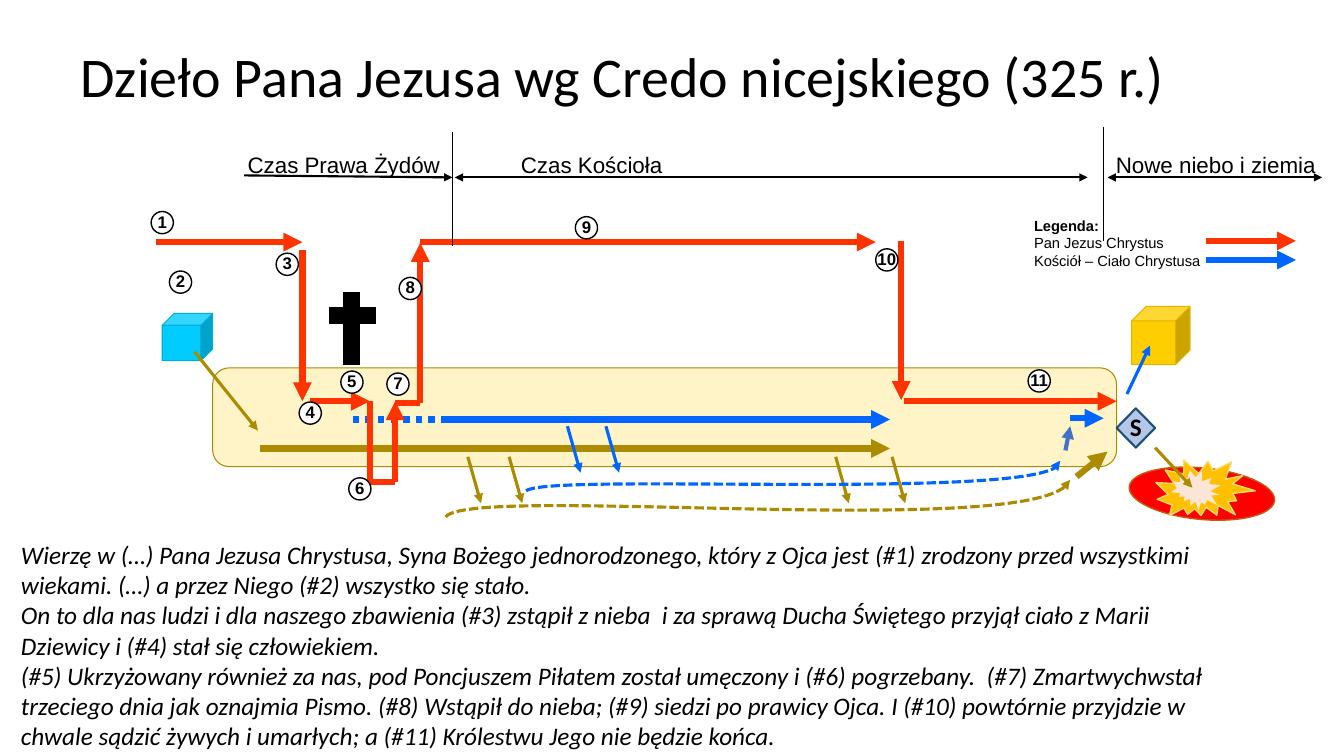
from typing import NamedTuple, Optional

from lxml import etree
from pptx import Presentation
from pptx import util as u
from pptx.dml.color import RGBColor
from pptx.enum import dml, shapes, text
from pptx.oxml.ns import qn

RED, BLUE, GOLD, BLACK, WHITE = "FF3300", "0066FF", "AD8B00", "000000", "FFFFFF"
DOTS, DASHES = dml.MSO_LINE.ROUND_DOT, dml.MSO_LINE.SQUARE_DOT
KIND = shapes.MSO_SHAPE
LEFT, CENTER = text.PP_ALIGN.LEFT, text.PP_ALIGN.CENTER
TOP, MIDDLE = text.MSO_ANCHOR.TOP, text.MSO_ANCHOR.MIDDLE
CURVE_STEPS = 60


class Line(NamedTuple):
    x1: float
    y1: float
    x2: float
    y2: float
    color: str = RED
    width: float = 4.5
    tail: bool = True
    head: bool = False
    dash: Optional[dml.MSO_LINE] = None


class Curve(NamedTuple):
    """A cubic curve: start, two control points, end."""
    points: tuple
    color: str


class Figure(NamedTuple):
    kind: shapes.MSO_SHAPE
    box: tuple
    fill: str
    outline: Optional[str]
    width: float = 0.75
    rotation: float = 0


class Label(NamedTuple):
    box: tuple
    lines: tuple
    size: float
    font: str = "Arial"
    align: text.PP_ALIGN = LEFT
    anchor: text.MSO_ANCHOR = TOP
    inset: float = 0.25
    italic: bool = False
    spacing: float = 1.0


BAND = Figure(KIND.ROUNDED_RECTANGLE, (5.36, 9.27, 22.78, 2.49), "FFF4C7", GOLD)
DIAMOND = Figure(KIND.DIAMOND, (28.14, 10.29, 0.97, 0.99), "B4C7E7", "1F4E79", 1.5)
FIGURES = [
    Figure(KIND.CUBE, (4.09, 7.9, 1.27, 1.19), "00CCFF", "00AED8"),
    Figure(KIND.CUBE, (28.52, 7.72, 1.47, 1.47), "FFCE00", "E0B400"),
    Figure(KIND.FLOWCHART_CONNECTOR, (28.45, 11.79, 3.68, 1.3), "FF0000", "C55A11", 1, 5.4),
    Figure(KIND.EXPLOSION2, (29.13, 11.48, 2.46, 1.73), "FFC000", "FFD966", 1, 16.2),
    Figure(KIND.EXPLOSION2, (29.57, 11.79, 1.19, 1.14), "FBE5D6", None, 0, 56.2),
]
TIMELINE = [
    Line(11.46, 4.47, 27.41, 4.47, BLACK, 1.5, head=True),
    Line(11.4, 4.47, 6.15, 4.42, BLACK, 1.5, tail=False, head=True),
    Line(27.91, 4.47, 33.32, 4.47, BLACK, 1.5, head=True),
    Line(11.4, 3.33, 11.4, 6.2, BLACK, 0.5, tail=False),
    Line(27.81, 3.2, 27.81, 6.07, BLACK, 0.5, tail=False),
]
COURSE = [
    Line(6.55, 11.3, 22.43, 11.3, GOLD),
    Line(10.59, 6.1, 22.07, 6.1),
    Line(11.2, 10.57, 22.43, 10.57, BLUE),
    Line(10.59, 10.16, 10.59, 6.12),
    Line(8.89, 10.57, 11.86, 10.57, BLUE, tail=False, dash=DOTS),
    Line(7.62, 6.3, 7.62, 10.11),
    Line(7.82, 10.11, 9.32, 10.11),
    Line(22.71, 6.07, 22.71, 10.08),
    Line(3.94, 6.1, 7.62, 6.1),
    Line(22.78, 10.11, 28.14, 10.11),
    Line(26.97, 10.54, 27.81, 10.54, BLUE),
    Line(9.32, 10.11, 9.32, 12.14, tail=False),
    Line(9.32, 12.14, 9.96, 12.14, tail=False),
    Line(9.96, 12.14, 9.96, 10.11),
    Line(9.96, 10.16, 10.59, 10.16, tail=False),
    Line(26.85, 11.35, 26.97, 10.74, "4472C4", 3, dash=DASHES),
    Line(27.13, 12.01, 27.91, 11.38, GOLD),
]
LEGEND = [Line(30.4, y, 32.66, y, color) for y, color in ((6.07, RED), (6.55, BLUE))]
CROSS = [
    Line(8.28, 7.95, 9.47, 7.95, BLACK, 12, tail=False),
    Line(8.86, 9.19, 8.86, 7.37, BLACK, 12, tail=False),
]
DEPARTURES = [
    Line(x, y, x + 0.33, y + 1.17, color, 2.25)
    for color, y, lefts in ((GOLD, 11.51, (11.79, 12.83, 21.06, 22.48)),
                            (BLUE, 10.74, (14.3, 15.27)))
    for x in lefts
]
DESTINATIONS = [
    Line(4.9, 8.86, 6.5, 10.85, GOLD, 2.25),
    Line(28.4, 9.93, 28.98, 8.71, BLUE, 2.25),
    Line(29.11, 11.28, 30.05, 12.29, GOLD, 2.25),
]
CURVES = [
    Curve(((11.23, 13.03), (11.81, 12.17), (26.42, 13.67), (26.97, 12.09)), GOLD),
    Curve(((13.26, 12.37), (13.79, 11.89), (26.82, 12.67), (26.72, 11.61)), BLUE),
]
ERAS = [
    Label((x, 3.71, width, 0.89), (name,), 16, align=CENTER, anchor=MIDDLE, inset=0.1)
    for x, width, name in ((5.92, 5.49, "Czas Prawa Żydów"), (12.47, 4.88, "Czas Kościoła"),
                           (27.81, 5.66, "Nowe niebo i ziemia"))
]
TITLE = Label((1.78, 1.02, 31.22, 1.98), ("Dzieło Pana Jezusa wg Credo nicejskiego (325 r.)",),
              40, "Calibri", anchor=MIDDLE, spacing=0.9)
LEGEND_TEXT = Label((25.81, 5.33, 5.05, 1.6),
                    ("Legenda:", "Pan Jezus Chrystus", "Kościół – Ciało Chrystusa"), 10.5)
CREED = Label((0.28, 13.46, 30.58, 5.64), (
    "Wierzę w (…) Pana Jezusa Chrystusa, Syna Bożego jednorodzonego, który z Ojca jest (#1) "
    "zrodzony przed wszystkimi wiekami. (…) a przez Niego (#2) wszystko się stało.",
    "On to dla nas ludzi i dla naszego zbawienia (#3) zstąpił z nieba  i za sprawą Ducha "
    "Świętego przyjął ciało z Marii Dziewicy i (#4) stał się człowiekiem.",
    "(#5) Ukrzyżowany również za nas, pod Poncjuszem Piłatem został umęczony i (#6) "
    "pogrzebany.  (#7) Zmartwychwstał trzeciego dnia jak oznajmia Pismo. (#8) Wstąpił do "
    "nieba; (#9) siedzi po prawicy Ojca. I (#10) powtórnie przyjdzie w chwale sądzić żywych "
    "i umarłych; a (#11) Królestwu Jego nie będzie końca."), 18, "Calibri", italic=True)
# Left and top of the numbered circles, from 1 to 11
STEPS = [(3.81, 5.33), (4.27, 6.83), (6.96, 6.38), (7.54, 10.13), (8.59, 9.35), (8.79, 12.04),
         (9.75, 9.4), (10.06, 6.99), (14.5, 5.46), (22.07, 6.27), (25.91, 9.32)]


def rgb(color: str) -> RGBColor:
    return RGBColor.from_string(color)


def style_line(shape, color: str, width: float, tail: bool, head: bool, dash) -> None:
    shape.line.color.rgb = rgb(color)
    shape.line.width = u.Pt(width)
    if dash is not None:
        shape.line.dash_style = dash
    for end, shown in (("a:headEnd", head), ("a:tailEnd", tail)):
        if shown:
            etree.SubElement(shape.line._get_or_add_ln(), qn(end), type="triangle")


def draw_line(slide, line: Line) -> None:
    ends = [u.Cm(value) for value in line[:4]]
    connector = slide.shapes.add_connector(shapes.MSO_CONNECTOR.STRAIGHT, *ends)
    style_line(connector, *line[4:])
    etree.SubElement(connector._element.spPr, qn("a:effectLst"))


def draw_curve(slide, curve: Curve) -> None:
    points = []
    for step in range(CURVE_STEPS + 1):
        t = step / CURVE_STEPS
        weights = ((1 - t) ** 3, 3 * t * (1 - t) ** 2, 3 * t ** 2 * (1 - t), t ** 3)
        points.append(tuple(u.Cm(sum(w * point[axis] for w, point in zip(weights, curve.points)))
                            for axis in (0, 1)))
    builder = slide.shapes.build_freeform(*points[0])
    builder.add_line_segments(points[1:], close=False)
    shape = builder.convert_to_shape()
    shape.fill.background()
    shape.shadow.inherit = False
    style_line(shape, curve.color, 2.25, True, False, DASHES)


def draw_figure(slide, figure: Figure):
    shape = slide.shapes.add_shape(figure.kind, *(u.Cm(value) for value in figure.box))
    shape.shadow.inherit = False
    shape.rotation = figure.rotation
    shape.fill.solid()
    shape.fill.fore_color.rgb = rgb(figure.fill)
    if figure.outline:
        shape.line.color.rgb = rgb(figure.outline)
        shape.line.width = u.Pt(figure.width)
    else:
        shape.line.fill.background()
    return shape


def format_paragraph(paragraph, size, font, align, spacing=1.0, bold=False, italic=False) -> None:
    paragraph.alignment = align
    paragraph.line_spacing = spacing
    for run in paragraph.runs:
        run.font.size, run.font.name = u.Pt(size), font
        run.font.bold, run.font.italic = bold, italic
        run.font.color.rgb = rgb(BLACK)


def draw_label(slide, label: Label):
    frame = slide.shapes.add_textbox(*(u.Cm(value) for value in label.box)).text_frame
    frame.word_wrap = True
    frame.vertical_anchor = label.anchor
    frame.margin_left = frame.margin_right = u.Cm(label.inset)
    frame.margin_top = frame.margin_bottom = u.Cm(min(label.inset, 0.13))
    frame.text = "\n".join(label.lines)
    for paragraph in frame.paragraphs:
        format_paragraph(paragraph, label.size, label.font, label.align, label.spacing,
                         italic=label.italic)
    return frame


def draw_sign(slide, figure: Figure, sign: str, size: float, font: str, align) -> None:
    """Draw a figure with a short bold text inside."""
    frame = draw_figure(slide, figure).text_frame
    frame.word_wrap = False
    frame.vertical_anchor = MIDDLE
    frame.margin_left = frame.margin_right = 0
    frame.text = sign
    format_paragraph(frame.paragraphs[0], size, font, align, 0.9, bold=True)


def main() -> None:
    presentation = Presentation()
    presentation.slide_width, presentation.slide_height = u.Cm(33.87), u.Cm(19.05)
    slide = presentation.slides.add_slide(presentation.slide_layouts[6])
    draw_label(slide, TITLE)
    draw_figure(slide, BAND)
    for figure in FIGURES:
        draw_figure(slide, figure)
    for line in COURSE + TIMELINE + LEGEND + CROSS + DEPARTURES + DESTINATIONS:
        draw_line(slide, line)
    for curve in CURVES:
        draw_curve(slide, curve)
    for label in ERAS + [CREED]:
        draw_label(slide, label)
    draw_label(slide, LEGEND_TEXT).paragraphs[0].runs[0].font.bold = True
    draw_sign(slide, DIAMOND, "S", 18, "Calibri", CENTER)
    for number, (x, y) in enumerate(STEPS, 1):
        circle = Figure(KIND.OVAL, (x, y, 0.56, 0.56), WHITE, BLACK, 1)
        draw_sign(slide, circle, str(number), 12, "Arial", CENTER)
    presentation.save("out.pptx")


if __name__ == "__main__":
    main()
